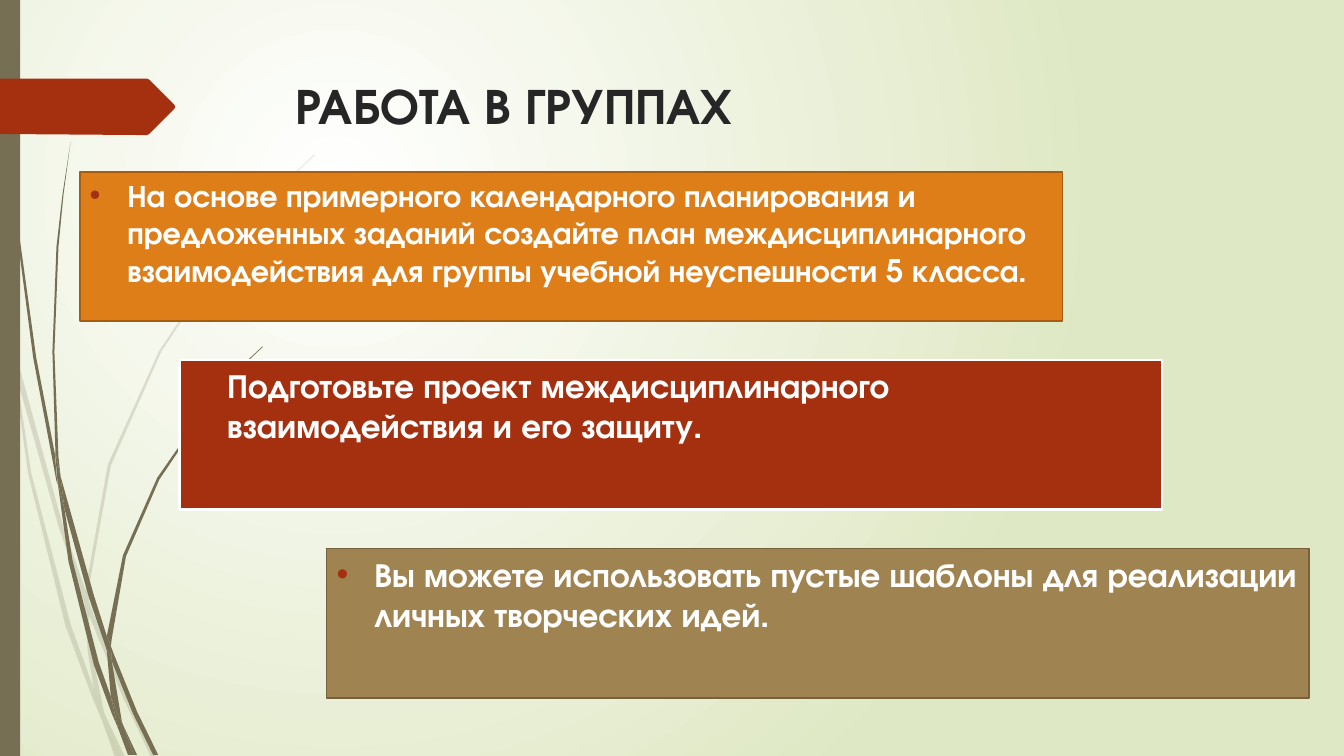
from lxml import etree
from pptx import Presentation
from pptx.dml import color
from pptx.enum import shapes, text
from pptx.oxml import ns
from pptx.util import Pt

FONT = "TeX Gyre Adventor"
OLIVE, RUST, WHITE = "766F54", "A53010", "FFFFFF"
UNIT = 0.72  # outlines are drawn in hundredths of an inch

# Pieces of the grass stems
PALE_BLADES = [
    [(11, 350), (9, 322), (0, 282), (0, 299), (10, 344)],
    [(58, 522), (84, 599), (85, 586), (62, 520), (14, 345), (17, 376)],
    [(92, 607), (88, 596), (88, 610), (123, 694), (150, 751), (155, 751), (127, 692)],
    [(119, 751), (124, 751), (105, 711)],
    [(93, 683), (70, 619), (31, 469), (17, 376), (11, 350), (28, 470), (65, 621),
     (92, 693), (101, 714), (99, 707)],
    [(84, 599), (87, 646), (93, 683), (96, 692), (105, 711), (103, 706), (91, 646),
     (88, 610), (88, 608)],
    [(88, 584), (110, 462), (160, 349), (229, 245), (268, 198), (290, 175), (312, 154),
     (312, 153), (289, 175), (268, 197), (228, 244), (158, 348), (107, 461), (85, 584),
     (85, 586), (88, 596)],
    [(101, 714), (114, 751), (119, 751)],
    [(88, 608), (88, 610), (88, 596), (85, 586), (84, 599)],
    [(96, 692), (93, 683), (99, 707), (101, 714), (119, 751), (105, 711)],
]
DARK_BLADES = [
    [(7, 110), (17, 233), (33, 355), (56, 477), (57, 481), (55, 457), (55, 453),
     (36, 355), (19, 232), (8, 109), (5, 48), (4, 0), (3, 0), (4, 48)],
    [(88, 592), (106, 645), (106, 633), (106, 631), (93, 590), (60, 472), (64, 505)],
    [(113, 649), (110, 641), (111, 656), (132, 708), (152, 749), (157, 749), (136, 706)],
    [(110, 691), (98, 657), (72, 556), (64, 505), (57, 477), (68, 557), (93, 659),
     (111, 708), (117, 722), (116, 717)],
    [(60, 472), (58, 453), (54, 349), (58, 245), (63, 193), (70, 141), (62, 193),
     (56, 245), (52, 349), (55, 449)],
    [(133, 749), (136, 749), (122, 719)],
    [(57, 477), (64, 505), (60, 472), (55, 449), (55, 453)],
    [(111, 633), (125, 552), (158, 476), (205, 406), (231, 374), (245, 359), (261, 344),
     (260, 344), (245, 358), (231, 373), (204, 405), (156, 474), (122, 551), (106, 631),
     (110, 641)],
    [(117, 722), (127, 749), (131, 749)],
    [(106, 645), (110, 691), (116, 706), (122, 719), (121, 716), (111, 656), (109, 651)],
    [(106, 645), (109, 651), (111, 656), (110, 641), (106, 631), (106, 633)],
    [(116, 706), (110, 691), (116, 717), (117, 722), (130, 749), (133, 749), (122, 719)],
]
ARROW = [(173, 108), (148, 133), (146, 134), (136, 134), (0, 133), (0, 78), (136, 78),
         (146, 78), (148, 79), (173, 104), (174, 106)]

# Left edge, top edge, fill, line, line width, font size, bullet, wording
CARDS = [
    (56.9, "DE7E18", "A45D12", 1.25, 22.2, True,
     "На основе примерного календарного планирования и предложенных заданий создайте "
     "план междисциплинарного взаимодействия для группы учебной неуспешности 5 класса."),
    (128.2, RUST, WHITE, 1.75, 24, False,
     "Подготовьте проект междисциплинарного взаимодействия и его защиту."),
    (233.3, "9F8351", "76613C", 1.25, 24, True,
     "Вы можете использовать пустые шаблоны для реализации личных творческих идей."),
]


def rgb(value):
    return color.RGBColor.from_string(value)


def add_xml(parent, tag, **attrs):
    return etree.SubElement(parent, ns.qn(tag), attrs)


def paint(sp, fill, line=None, width=0, alpha=None):
    sp.shadow.inherit = False
    sp.fill.solid()
    sp.fill.fore_color.rgb = rgb(fill)
    if alpha:
        clr = sp.element.spPr.find(".//" + ns.qn("a:srgbClr"))
        add_xml(clr, "a:alpha", val=str(alpha * 1000))
    if line:
        sp.line.color.rgb = rgb(line)
        sp.line.width = Pt(width)
    else:
        sp.line.fill.background()


def add_outline(s, x, y, pts, fill, alpha=None):
    fb = s.shapes.build_freeform(*pts[0], scale=Pt(UNIT))
    fb.add_line_segments(pts[1:], close=True)
    paint(fb.convert_to_shape(Pt(x), Pt(y)), fill, alpha=alpha)


def write(sp, words, size, fill, bullet=False, indent=0):
    tf = sp.text_frame
    p = tf.paragraphs[0]
    frame = {"word_wrap": True, "vertical_anchor": text.MSO_ANCHOR.TOP}
    for name, value in frame.items():
        setattr(tf, name, value)
    p.alignment = text.PP_ALIGN.LEFT
    pPr = p._p.get_or_add_pPr()
    if indent:
        pPr.set("marL", str(Pt(indent)))
    if bullet:
        pPr.set("indent", str(-Pt(indent)))
        add_xml(add_xml(pPr, "a:buClr"), "a:srgbClr", val=RUST)
        add_xml(pPr, "a:buFont", typeface="Arial")
        add_xml(pPr, "a:buChar", char="•")
    r = p.add_run()
    r.text = words
    for name, value in {"name": FONT, "size": Pt(size), "bold": True}.items():
        setattr(r.font, name, value)
    r.font.color.rgb = rgb(fill)


def add_background(s):
    fill = s.background.fill
    fill.gradient()
    for stop, value in zip(fill.gradient_stops, (WHITE, "DFE8C4")):
        stop.color.rgb = rgb(value)
    grad = s.element.find(".//" + ns.qn("a:gradFill"))
    grad.remove(grad.find(ns.qn("a:lin")))
    focus = add_xml(grad, "a:path", path="circle")
    add_xml(focus, "a:fillToRect", l="50000", t="50000", r="100000", b="100000")


def add_decoration(s, x, y, h):
    for blades, alpha in ((PALE_BLADES, 20), (DARK_BLADES, None)):
        for pts in blades:
            add_outline(s, x, y, pts, OLIVE, alpha)
    bar = s.shapes.add_shape(shapes.MSO_SHAPE.RECTANGLE, Pt(x), Pt(y), Pt(14.4), Pt(h))
    paint(bar, OLIVE)
    add_outline(s, x, y, ARROW, RUST)


def add_title(s, x, y, w, h):
    sp = s.shapes.add_textbox(Pt(x), Pt(y), Pt(w), Pt(h))
    write(sp, "РАБОТА В ГРУППАХ", 36, "262626")


def add_cards(s, y, w, h, step):
    for i, (x, fill, line, width, size, bullet, words) in enumerate(CARDS):
        sp = s.shapes.add_shape(shapes.MSO_SHAPE.RECTANGLE,
                                Pt(x), Pt(y + i * step), Pt(w), Pt(h))
        paint(sp, fill, line, width)
        write(sp, words, size, WHITE, bullet, indent=27)


def main():
    prs = Presentation()
    prs.slide_width, prs.slide_height = Pt(960), Pt(540)
    s = prs.slides.add_slide(prs.slide_layouts[6])
    add_background(s)
    add_decoration(s, 0, 0, 540)
    add_title(s, 204.2, 49.3, 702, 100.8)
    add_cards(s, 122.6, 702, 106.6, 134.6)
    prs.save("out.pptx")


if __name__ == "__main__":
    main()
